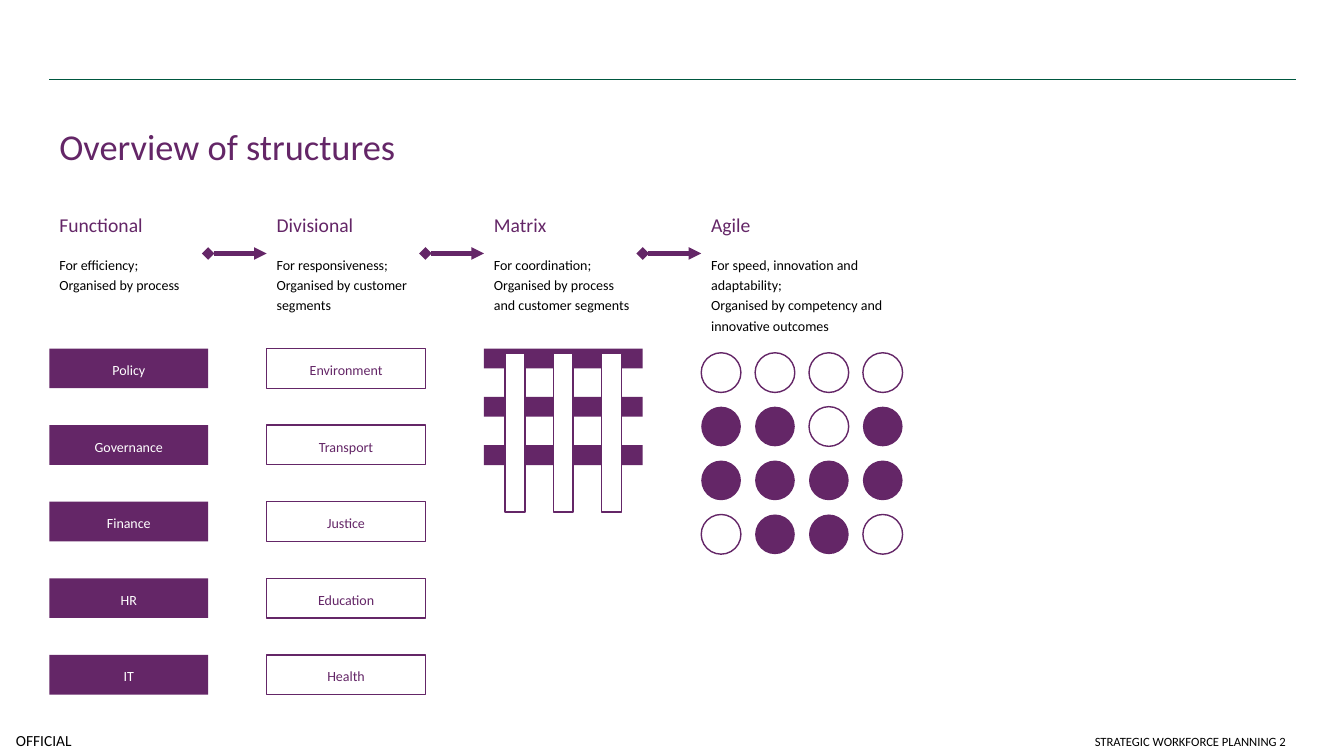
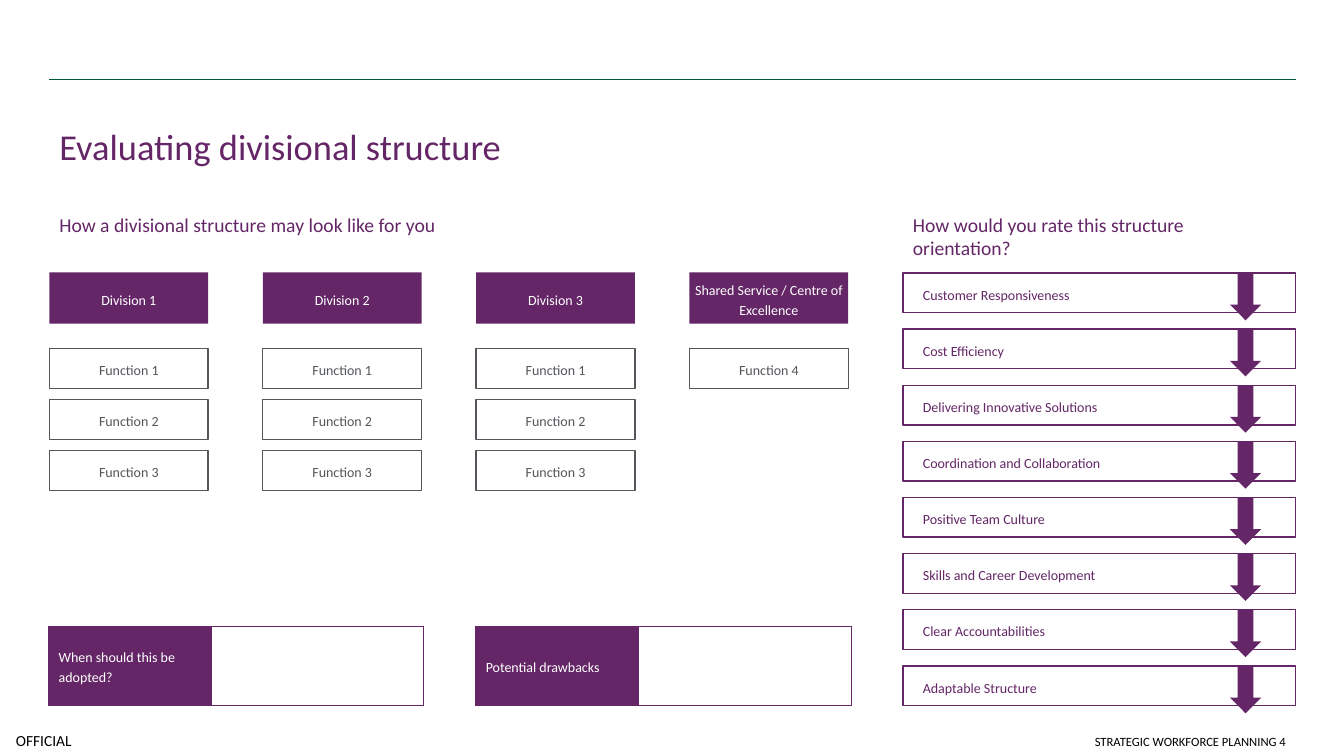
from dataclasses import dataclass

from lxml import etree
from pptx import Presentation
from pptx.dml.color import RGBColor
from pptx.enum.shapes import MSO_CONNECTOR, MSO_SHAPE
from pptx.enum.text import MSO_ANCHOR, PP_ALIGN
from pptx.oxml.ns import qn
from pptx.util import Pt

RECTANGLE, OVAL, DOWN_ARROW = MSO_SHAPE.RECTANGLE, MSO_SHAPE.OVAL, MSO_SHAPE.DOWN_ARROW
STRAIGHT = MSO_CONNECTOR.STRAIGHT
TOP, MIDDLE, BOTTOM = MSO_ANCHOR.TOP, MSO_ANCHOR.MIDDLE, MSO_ANCHOR.BOTTOM
LEFT, CENTER, RIGHT = PP_ALIGN.LEFT, PP_ALIGN.CENTER, PP_ALIGN.RIGHT
SIDE_LEFT, SIDE_RIGHT = 1, 3


@dataclass(frozen=True)
class Theme:
    font: str = "Calibri"
    purple: str = "642667"
    green: str = "00573F"
    gray: str = "53565A"
    white: str = "FFFFFF"
    black: str = "000000"
    title: float = 26
    heading: float = 14
    marking: float = 11
    body: float = 10
    footer: float = 9
    spacing: float = 1.2


THEME = Theme()

# Shared grid, in points
MARGIN, RIGHT_EDGE = 35.3, 925.5
CONTENT_WIDTH = RIGHT_EDGE - MARGIN
HEADING_TOP, HEADING_HEIGHT = 148.3, 65.5
BOX_WIDTH, BOX_HEIGHT, BOX_TOP = 113.4, 28.35, 249
INSETS = (7.2, 3.6, 7.2, 3.6)
NO_INSETS = (0, 0, 0, 0)

# Overview of structures
STRUCTURE_PITCH = 155.2
STRUCTURES = [
    ("Functional", ["For efficiency;", "Organised by process"], BOX_WIDTH),
    ("Divisional", ["For responsiveness;", "Organised by customer segments"], BOX_WIDTH),
    ("Matrix", ["For coordination;", "Organised by process and customer segments"], BOX_WIDTH),
    ("Agile", ["For speed, innovation and adaptability;",
               "Organised by competency and innovative outcomes"], 144),
]
FUNCTIONS = ["Policy", "Governance", "Finance", "HR", "IT"]
SECTORS = ["Environment", "Transport", "Justice", "Education", "Health"]
STACK_PITCH = 54.7
MATRIX_BARS, BAR_THICKNESS, BAR_PITCH = 3, 14.2, 34.5
AGILE_TEAMS = ["○○○○", "●●○●", "●●●●", "○●●○"]
TEAM_PITCH = 38.5

# Evaluating divisional structure
DIVISION_PITCH, DIVISION_TOP, DIVISION_HEIGHT, FUNCTION_PITCH = 152.4, 194.5, 36.7, 36.5
SHARED_FUNCTIONS = ["Function 1", "Function 2", "Function 3"]
DIVISIONS = [
    ("Division 1", SHARED_FUNCTIONS),
    ("Division 2", SHARED_FUNCTIONS),
    ("Division 3", SHARED_FUNCTIONS),
    ("Shared Service / Centre of Excellence", ["Function 4"]),
]
QUESTIONS = [(34.7, "When should this be adopted?"), (339.8, "Potential drawbacks")]
QUESTION_TOP, QUESTION_HEIGHT, QUESTION_COLUMNS = 447.2, 56.7, (116, 152)
CRITERIA = [
    "Customer Responsiveness", "Cost Efficiency", "Delivering Innovative Solutions",
    "Coordination and Collaboration", "Positive Team Culture",
    "Skills and Career Development", "Clear Accountabilities", "Adaptable Structure",
]
CRITERIA_LEFT, CRITERIA_TOP, CRITERIA_PITCH = 645, 195, 40.1
RATING_LEFT, RATING_WIDTH, RATING_HEIGHT = 878.5, 22.3, 33.8


def points(*lengths):
    return [Pt(length) for length in lengths]


def color(value):
    return RGBColor.from_string(value)


def format_paragraph(paragraph, size, text_color, align=LEFT, spacing=None):
    paragraph.alignment = align
    if spacing:
        paragraph.line_spacing = spacing
    for run in paragraph.runs:
        run.font.name = THEME.font
        run.font.size = Pt(size)
        run.font.color.rgb = color(text_color)


def prepare_frame(text_frame, anchor, insets):
    text_frame.word_wrap = True
    text_frame.vertical_anchor = anchor
    (text_frame.margin_left, text_frame.margin_top,
     text_frame.margin_right, text_frame.margin_bottom) = points(*insets)


def add_text(slide, place, text, size, text_color, anchor=TOP, align=LEFT,
             spacing=None, insets=INSETS):
    text_box = slide.shapes.add_textbox(*points(*place))
    prepare_frame(text_box.text_frame, anchor, insets)
    text_box.text_frame.text = text
    format_paragraph(text_box.text_frame.paragraphs[0], size, text_color, align, spacing)
    return text_box


def add_box(shapes, place, fill, outline=None, text="", text_color=THEME.white,
            kind=RECTANGLE, align=CENTER, insets=NO_INSETS):
    shape = shapes.add_shape(kind, *points(*place))
    shape.shadow.inherit = False
    shape.fill.solid()
    shape.fill.fore_color.rgb = color(fill)
    if outline:
        shape.line.color.rgb = color(outline)
        shape.line.width = Pt(1)
    else:
        shape.line.fill.background()
    if text:
        prepare_frame(shape.text_frame, MIDDLE, insets)
        shape.text_frame.text = text
        format_paragraph(shape.text_frame.paragraphs[0], THEME.body, text_color,
                         align, THEME.spacing)


def add_line(slide, ends, line_color, width):
    line = slide.shapes.add_connector(STRAIGHT, *points(*ends))
    line.line.color.rgb = color(line_color)
    line.line.width = Pt(width)
    etree.SubElement(line._element.spPr, qn("a:effectLst"))
    return line


def add_arrow(slide, source, target):
    arrow = add_line(slide, (0, 0, 0, 0), THEME.purple, 3)
    arrow.begin_connect(source, SIDE_RIGHT)
    arrow.end_connect(target, SIDE_LEFT)
    outline = arrow.line._get_or_add_ln()
    for tag, head in (("a:headEnd", "diamond"), ("a:tailEnd", "triangle")):
        etree.SubElement(outline, qn(tag), type=head)


def add_slide(presentation, title, number):
    """Add a blank slide with the shared rule, marking, title and footer."""
    slide = presentation.slides.add_slide(presentation.slide_layouts[6])
    add_line(slide, (MARGIN, 56.6, RIGHT_EDGE, 56.6), THEME.green, 1)
    add_text(slide, (0, 517.7, 62.6, 22.3), "OFFICIAL", THEME.marking, THEME.black,
             MIDDLE, CENTER, insets=NO_INSETS)
    add_text(slide, (MARGIN, 64, CONTENT_WIDTH, 73.5), title, THEME.title, THEME.purple,
             MIDDLE, spacing=THEME.spacing)
    add_text(slide, (492.5, 510.5, 433, 28), f"STRATEGIC WORKFORCE PLANNING {number}",
             THEME.footer, THEME.black, BOTTOM, RIGHT)
    return slide


def add_heading(slide, left, width, text, height=HEADING_HEIGHT):
    return add_text(slide, (left, HEADING_TOP, width, height), text,
                    THEME.heading, THEME.purple)


def add_stack(slide, left, pitch, labels, fill, outline, text_color):
    for row, label in enumerate(labels):
        place = (left, BOX_TOP + row * pitch, BOX_WIDTH, BOX_HEIGHT)
        add_box(slide.shapes, place, fill, outline, label, text_color)


def add_matrix(slide, left):
    shapes = slide.shapes.add_group_shape().shapes
    for row in range(MATRIX_BARS):
        place = (left, BOX_TOP + row * BAR_PITCH, BOX_WIDTH, BAR_THICKNESS)
        add_box(shapes, place, THEME.purple)
    for column in range(MATRIX_BARS):
        place = (left + 15 + column * BAR_PITCH, BOX_TOP + 3.4, BAR_THICKNESS, BOX_WIDTH)
        add_box(shapes, place, THEME.white, THEME.purple)


def add_teams(slide, left):
    shapes = slide.shapes.add_group_shape().shapes
    for row, teams in enumerate(AGILE_TEAMS):
        for column, team in enumerate(teams):
            place = (left + column * TEAM_PITCH, BOX_TOP + 3 + row * TEAM_PITCH,
                     BOX_HEIGHT, BOX_HEIGHT)
            fill, outline = ((THEME.purple, None) if team == "●"
                             else (THEME.white, THEME.purple))
            add_box(shapes, place, fill, outline, kind=OVAL)


def add_border(cell):
    properties = cell._tc.get_or_add_tcPr()
    for side in ("a:lnL", "a:lnR", "a:lnT", "a:lnB"):
        line = etree.SubElement(properties, qn(side), w=str(Pt(0.5)))
        fill = etree.SubElement(line, qn("a:solidFill"))
        etree.SubElement(fill, qn("a:srgbClr"), val=THEME.purple)


def add_question(slide, left, question):
    place = (left, QUESTION_TOP, sum(QUESTION_COLUMNS), QUESTION_HEIGHT)
    table = slide.shapes.add_table(1, len(QUESTION_COLUMNS), *points(*place)).table
    table.first_row = table.horz_banding = False
    for column, width in enumerate(QUESTION_COLUMNS):
        table.columns[column].width = Pt(width)
        cell = table.cell(0, column)
        add_border(cell)
        cell.fill.solid()
        cell.fill.fore_color.rgb = color(THEME.white if column else THEME.purple)
    label = table.cell(0, 0)
    label.vertical_anchor = MIDDLE
    label.text_frame.text = question
    format_paragraph(label.text_frame.paragraphs[0], THEME.body, THEME.white,
                     spacing=THEME.spacing)


def build_overview(presentation):
    slide = add_slide(presentation, "Overview of structures", 2)
    lefts = [MARGIN + index * STRUCTURE_PITCH for index in range(len(STRUCTURES))]
    headings = []
    for left, (name, purposes, width) in zip(lefts, STRUCTURES):
        heading = add_heading(slide, left, width, name)
        for index, purpose in enumerate(purposes):
            paragraph = heading.text_frame.add_paragraph()
            paragraph.text = purpose
            paragraph.space_before = Pt(0 if index else 12.2)
            format_paragraph(paragraph, THEME.body, THEME.black, spacing=THEME.spacing)
        headings.append(heading)
    for source, target in zip(headings, headings[1:]):
        add_arrow(slide, source, target)

    functional, divisional, matrix, agile = lefts
    add_stack(slide, functional, STACK_PITCH, FUNCTIONS, THEME.purple, None, THEME.white)
    add_stack(slide, divisional, STACK_PITCH, SECTORS, THEME.white, THEME.purple, THEME.purple)
    add_matrix(slide, matrix)
    add_teams(slide, agile)


def build_evaluation(presentation):
    slide = add_slide(presentation, "Evaluating divisional structure", 4)
    add_heading(slide, MARGIN, 609, "How a divisional structure may look like for you")
    for index, (division, functions) in enumerate(DIVISIONS):
        left = MARGIN + index * DIVISION_PITCH
        add_box(slide.shapes, (left, DIVISION_TOP, BOX_WIDTH, DIVISION_HEIGHT),
                THEME.purple, text=division)
        add_stack(slide, left, FUNCTION_PITCH, functions, THEME.white, THEME.gray, THEME.gray)
    for left, question in QUESTIONS:
        add_question(slide, left, question)

    width = RIGHT_EDGE - CRITERIA_LEFT
    add_heading(slide, CRITERIA_LEFT, width,
                "How would you rate this structure orientation?", 46)
    for row, criterion in enumerate(CRITERIA):
        top = CRITERIA_TOP + row * CRITERIA_PITCH
        add_box(slide.shapes, (CRITERIA_LEFT, top, width, BOX_HEIGHT), THEME.white,
                THEME.purple, criterion, THEME.purple, align=LEFT, insets=(14.2, 0, 0, 0))
        add_box(slide.shapes, (RATING_LEFT, top, RATING_WIDTH, RATING_HEIGHT),
                THEME.purple, kind=DOWN_ARROW)


def main():
    presentation = Presentation()
    presentation.slide_width, presentation.slide_height = points(960, 540)
    build_overview(presentation)
    build_evaluation(presentation)
    presentation.save("out.pptx")


if __name__ == "__main__":
    main()
